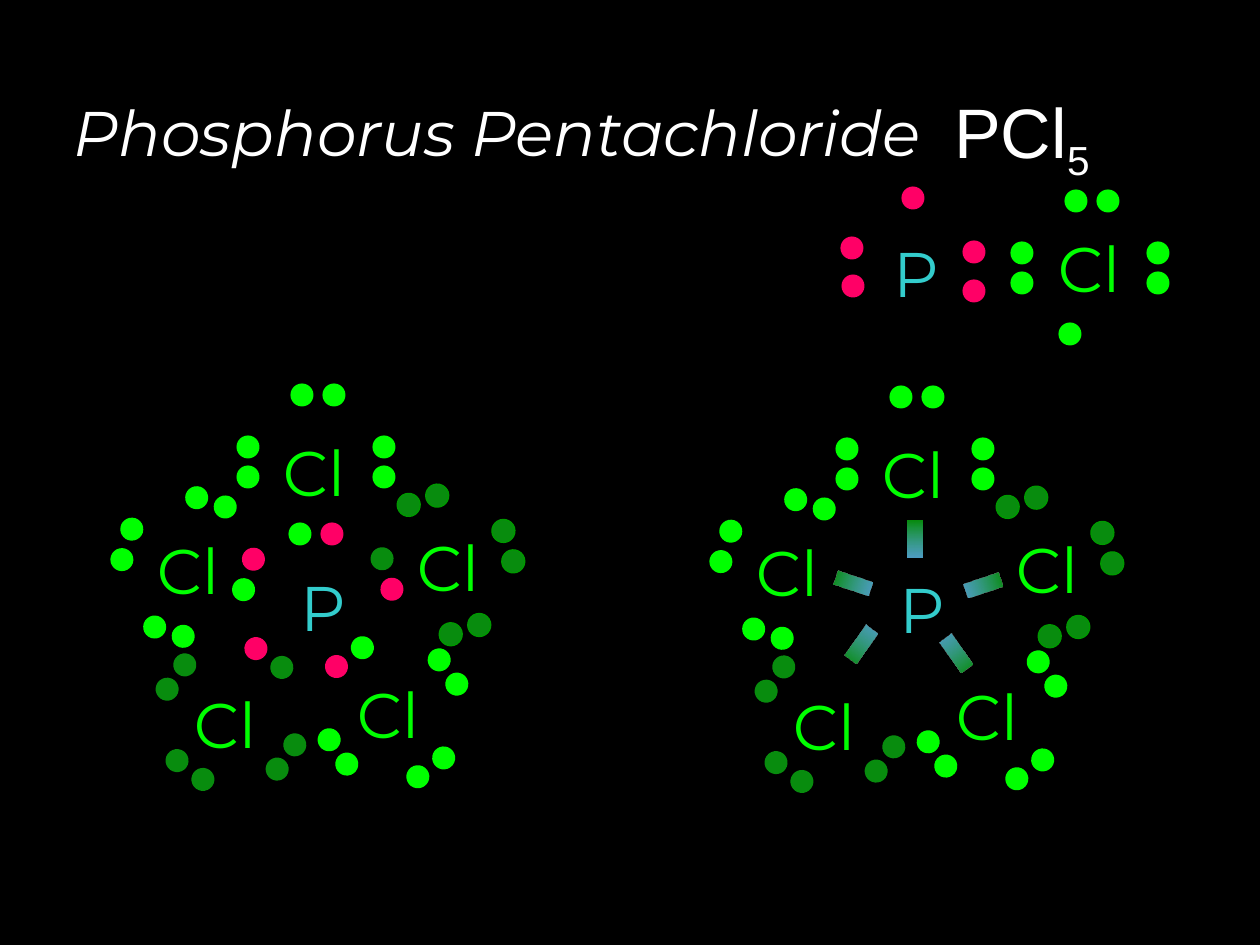
from math import cos, radians, sin

from pptx import Presentation
from pptx.dml.color import RGBColor
from pptx.enum.shapes import MSO_SHAPE
from pptx.enum.text import MSO_ANCHOR, PP_ALIGN
from pptx.oxml.ns import qn
from pptx.util import Emu, Pt
from lxml import etree

PX = 914400 / 126  # EMU in one px

THEME = {
    "background": RGBColor(0x00, 0x00, 0x00),
    "text": RGBColor(0xFF, 0xFF, 0xFF),
    "chlorine": RGBColor(0x00, 0xFF, 0x00),
    "dark chlorine": RGBColor(0x08, 0x8C, 0x0E),
    "dot outline": RGBColor(0x00, 0x99, 0x00),
    "phosphorus": RGBColor(0x33, 0xCC, 0xCC),
    "phosphorus dot": RGBColor(0xFF, 0x00, 0x66),
    "bond end": RGBColor(0x66, 0xCC, 0xFF),
    "font": "Montserrat",
    "formula font": "Arial",
    "atom size": Pt(36),
    "formula size": Pt(40),
}
DOT = 23
BOND_WIDTH, BOND_HEIGHT = 15, 37

# Electrons of an upright chlorine atom, measured from its centre
LONE_PAIRS = [(-68, -15), (-68, 15), (68, -15), (68, 15), (-14, -67), (18, -67)]

# Angle, electron centre, symbol centre and top, shared pair, bond centre, colour
LIGANDS = [
    (0, (316, 462), (314, 427), (0, 72), (316, 537), "chlorine"),
    (72, (444, 565), (448, 522), (-9, 57), (384, 583), "dark chlorine"),
    (144, (393, 712), (388, 669), (3, 70), (357, 651), "chlorine"),
    (216, (231, 717), (225, 679), (4, 70), (262, 642), "dark chlorine"),
    (288, (190, 567), (188, 525), (11, 58), (254, 581), "chlorine"),
]

presentation = Presentation()
presentation.slide_width = Emu(round(1260 * PX))
presentation.slide_height = Emu(round(945 * PX))
slide = presentation.slides.add_slide(presentation.slide_layouts[5])
slide.background.fill.solid()
slide.background.fill.fore_color.rgb = THEME["background"]


def add_dot(center, offset, color, angle=0, outlined=False):
    """Draw an electron at an offset turned by angle about the center."""
    turn = radians(angle)
    x = center[0] + offset[0] * cos(turn) - offset[1] * sin(turn)
    y = center[1] + offset[0] * sin(turn) + offset[1] * cos(turn)
    shape = slide.shapes.add_shape(
        MSO_SHAPE.OVAL,
        *[Emu(round(v * PX)) for v in (x - DOT / 2, y - DOT / 2, DOT, DOT)])
    shape.rotation = angle
    shape.shadow.inherit = False
    shape.fill.solid()
    shape.fill.fore_color.rgb = THEME[color]
    if outlined:
        shape.line.color.rgb = THEME["dot outline"]
        shape.line.width = Pt(0.75)
    else:
        shape.line.fill.background()


def add_atom(symbol, center_x, top, color, width=74, height=79):
    """Write an element symbol centred on center_x."""
    box = slide.shapes.add_textbox(
        *[Emu(round(v * PX)) for v in (center_x - width / 2, top, width, height)])
    box.text_frame.word_wrap = False
    box.text_frame.margin_left = box.text_frame.margin_right = 0
    paragraph = box.text_frame.paragraphs[0]
    paragraph.alignment = PP_ALIGN.CENTER
    run = paragraph.add_run()
    run.text = symbol
    run.font.name = THEME["font"]
    run.font.size = THEME["atom size"]
    run.font.color.rgb = THEME[color]


# Title
title = slide.shapes.title
title.left, title.top, title.width, title.height = [
    Emu(round(v * PX)) for v in (67, 87, 860, 88)]
title.text_frame.word_wrap = False
title.text_frame.margin_left = title.text_frame.margin_right = 0
title.text_frame.vertical_anchor = MSO_ANCHOR.TOP
paragraph = title.text_frame.paragraphs[0]
paragraph.alignment = PP_ALIGN.CENTER
run = paragraph.add_run()
run.text = "Phosphorus Pentachloride"
run.font.name = THEME["font"]
run.font.size = THEME["atom size"]
run.font.italic = True
run.font.color.rgb = THEME["text"]

# Formula with subscript
formula = slide.shapes.add_textbox(
    *[Emu(round(v * PX)) for v in (942, 82, 266, 97)])
formula.text_frame.word_wrap = True
paragraph = formula.text_frame.paragraphs[0]
for text, baseline in (("PCl", None), ("5", "-25000")):
    run = paragraph.add_run()
    run.text = text
    run.font.name = THEME["formula font"]
    run.font.size = THEME["formula size"]
    run.font.color.rgb = THEME["text"]
    if baseline:
        run.font._element.set("baseline", baseline)

# Separate phosphorus and chlorine atoms
add_atom("P", 916, 228, "phosphorus", 70, 89)
for offset in [(-64, -24), (-63, 14), (-3, -74), (58, -20), (58, 19)]:
    add_dot((916, 272), offset, "phosphorus dot")
add_atom("Cl", 1089, 223, "chlorine", 83, 89)
for offset in LONE_PAIRS + [(-20, 66)]:
    add_dot((1090, 268), offset, "chlorine")

# Molecule with shared electrons at left, with bonds at right
for dx, dy, bonded in ((0, 0, False), (599, 2, True)):
    add_atom("P", 323 + dx, 562 + dy, "phosphorus", 70, 89)
    for angle, center, symbol, shared, bond, color in LIGANDS:
        center = (center[0] + dx, center[1] + dy)
        add_atom("Cl", symbol[0] + dx, symbol[1] + dy, "chlorine")
        for offset in LONE_PAIRS:
            add_dot(center, offset, color, angle, outlined=angle == 72)
        if not bonded:
            pair = [color, "phosphorus dot"]
            for side, dot_color in zip((-16, 16), pair):
                add_dot(center, (shared[0] + side, shared[1]), dot_color, angle)
            continue
        shape = slide.shapes.add_shape(
            MSO_SHAPE.RECTANGLE,
            *[Emu(round(v * PX)) for v in (
                bond[0] + dx - BOND_WIDTH / 2, bond[1] + dy - BOND_HEIGHT / 2,
                BOND_WIDTH, BOND_HEIGHT)])
        shape.rotation = angle
        shape.shadow.inherit = False
        shape.line.fill.background()
        shape.fill.gradient()
        shape.fill.gradient_angle = 270
        start, end = shape.fill.gradient_stops
        start.position, end.position = 0, 1
        start.color.rgb = THEME["dark chlorine"]
        end.color.rgb = THEME["bond end"]
        end_color = shape._element.spPr.findall(".//" + qn("a:srgbClr"))[-1]
        etree.SubElement(end_color, qn("a:alpha")).set("val", "76000")

presentation.save("out.pptx")
